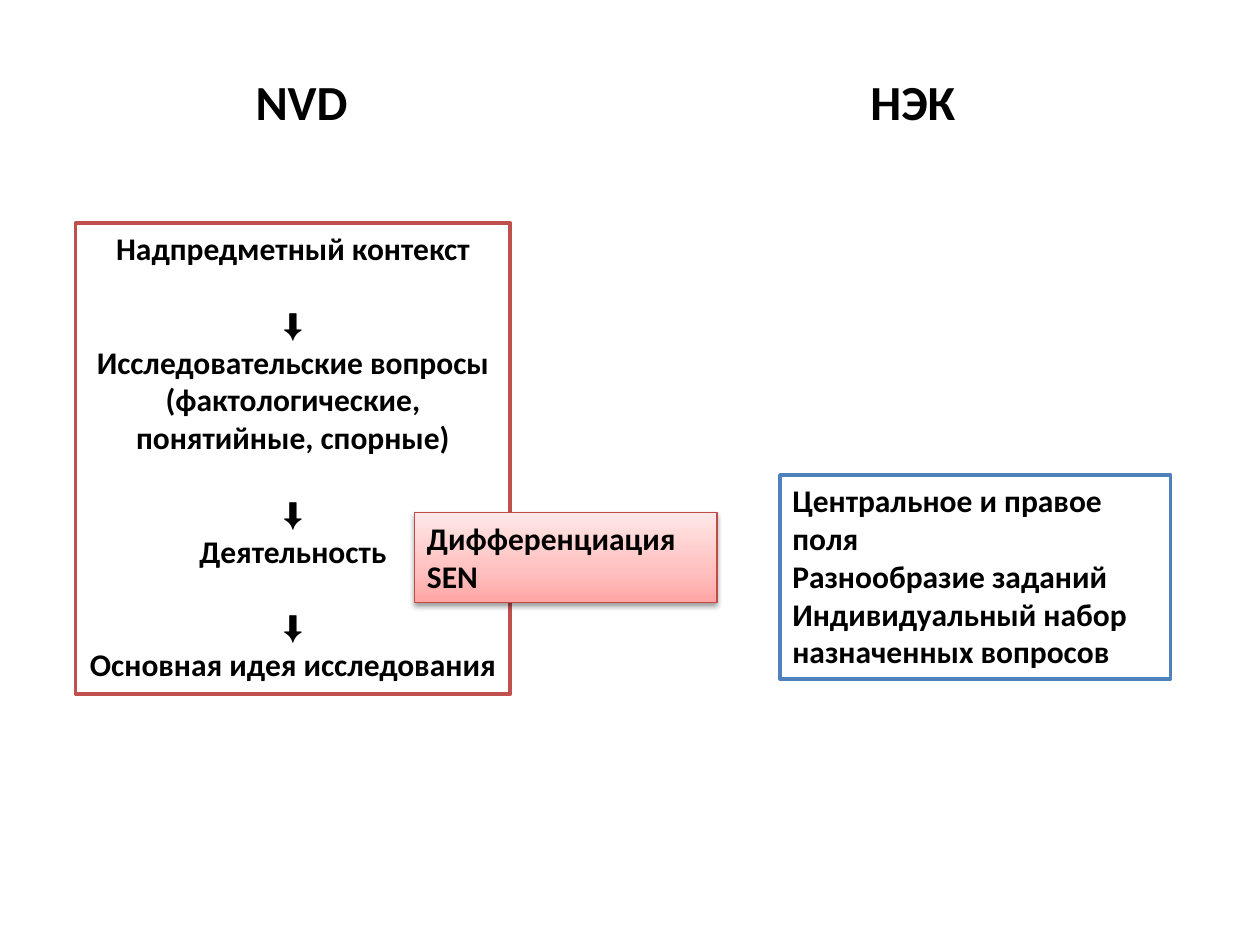
from copy import deepcopy

from lxml.etree import SubElement
from pptx import Presentation
from pptx.dml.color import RGBColor
from pptx.enum.shapes import MSO_SHAPE
from pptx.enum.text import MSO_ANCHOR, PP_ALIGN
from pptx.oxml.ns import qn
from pptx.util import Inches, Pt

COLORS = {
    "text": "000000",
    "paper": "FFFFFF",
    "program": "C0504D",
    "platform": "4F81BD",
    "support": "BF4C48",
    "support_dark": "FFA6A5",
    "support_middle": "FFC0BF",
    "support_light": "FFE7E7",
}
ARROW = "⬇"
PROGRAM_STEPS = [
    "Надпредметный контекст",
    ARROW,
    "Исследовательские вопросы",
    "(фактологические, понятийные, спорные)",
    ARROW,
    "Деятельность",
    ARROW,
    "Основная идея исследования",
]
PLATFORM_LINES = [
    "Центральное и правое поля",
    "Разнообразие заданий",
    "Индивидуальный набор назначенных вопросов",
]
SUPPORT_LINES = ["Дифференциация", "SEN"]


def color(name):
    """Return the named color."""
    return RGBColor.from_string(COLORS[name])


def write_lines(text_frame, lines, size=18, alignment=PP_ALIGN.LEFT):
    """Write bold paragraphs, with a line of space above each arrow."""
    text_frame.word_wrap = True
    text_frame.vertical_anchor = MSO_ANCHOR.TOP
    text_frame.text = "\n".join(lines)
    for paragraph in text_frame.paragraphs:
        paragraph.alignment = alignment
        if paragraph.text == ARROW:
            paragraph.space_before = Pt(21.6)
        paragraph.font.name = "Calibri"
        paragraph.font.size = Pt(size)
        paragraph.font.bold = True
        paragraph.font.color.rgb = color("text")


def add_heading(slide, box):
    """Add both column titles, parted by a tab stop."""
    shape = slide.shapes.add_textbox(*map(Inches, box))
    write_lines(shape.text_frame, ["NVD\tНЭК"], size=28)
    properties = shape.text_frame.paragraphs[0]._p.get_or_add_pPr()
    tab_list = properties.makeelement(qn("a:tabLst"))
    properties.insert(0, tab_list)
    SubElement(tab_list, qn("a:tab"), pos=str(Inches(4.88)), algn="l")


def add_panel(slide, box, lines, line_color, line_width=2, alignment=PP_ALIGN.LEFT):
    """Add a white outlined rectangle with text."""
    shape = slide.shapes.add_shape(MSO_SHAPE.RECTANGLE, *map(Inches, box))
    shape.shadow.inherit = False
    shape.fill.solid()
    shape.fill.fore_color.rgb = color("paper")
    shape.line.color.rgb = color(line_color)
    shape.line.width = Pt(line_width)
    write_lines(shape.text_frame, lines, alignment=alignment)
    return shape


def add_support_panel(slide, box):
    """Add the differentiation panel with its gradient and shadow."""
    shape = add_panel(slide, box, SUPPORT_LINES, "support", 0.75)
    shape.fill.gradient()
    shape.fill.gradient_angle = 90
    stop_list = shape._element.spPr.find(qn("a:gradFill")).find(qn("a:gsLst"))
    stop_list.append(deepcopy(stop_list[0]))
    stops = zip(shape.fill.gradient_stops, (0, 0.35, 1), ("dark", "middle", "light"))
    for stop, position, tone in stops:
        stop.position = position
        stop.color.rgb = color(f"support_{tone}")
    effects = shape._element.spPr.find(qn("a:effectLst"))
    shadow = SubElement(
        effects, qn("a:outerShdw"), blurRad=str(Pt(3.1)), dist=str(Pt(1.6)),
        dir="5400000", rotWithShape="0",
    )
    shadow_color = SubElement(shadow, qn("a:srgbClr"), val=COLORS["text"])
    SubElement(shadow_color, qn("a:alpha"), val="38000")


def main():
    """Build and save the presentation."""
    presentation = Presentation()
    presentation.slide_width = Inches(10)
    presentation.slide_height = Inches(7.5)
    slide = presentation.slides.add_slide(presentation.slide_layouts[6])
    add_panel(slide, (0.6, 1.77, 3.45, 3.74), PROGRAM_STEPS, "program",
              alignment=PP_ALIGN.CENTER)
    add_panel(slide, (6.19, 3.77, 3.1, 1.62), PLATFORM_LINES, "platform")
    add_heading(slide, (1.93, 0.52, 6.34, 0.57))
    add_support_panel(slide, (3.29, 4.07, 2.4, 0.71))
    presentation.save("out.pptx")


if __name__ == "__main__":
    main()
